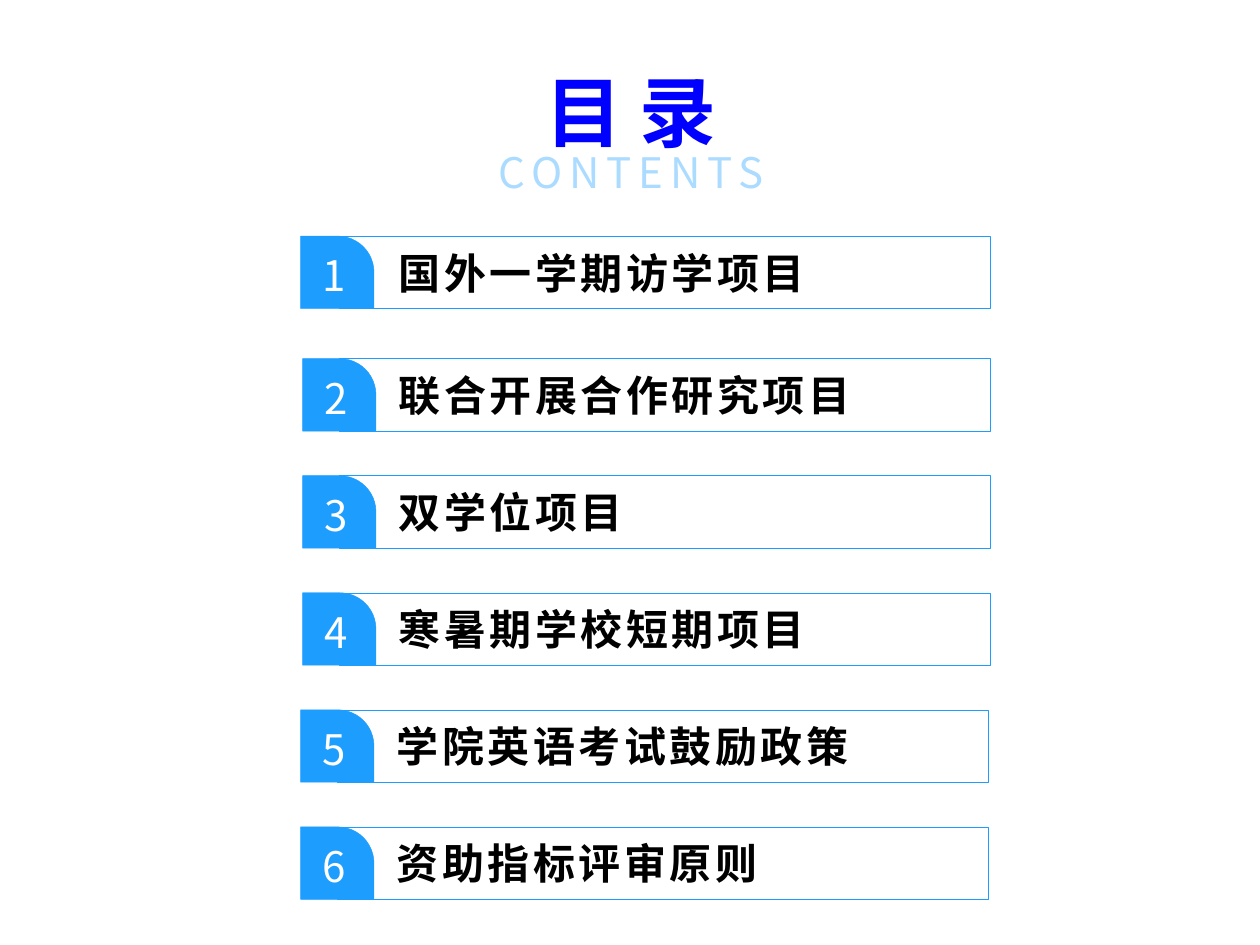
from dataclasses import dataclass

from lxml import etree
from pptx import Presentation
from pptx.dml.color import RGBColor
from pptx.enum.shapes import MSO_SHAPE
from pptx.enum.text import MSO_ANCHOR, MSO_AUTO_SIZE, PP_ALIGN
from pptx.oxml.ns import qn
from pptx.util import Cm, Pt

RECT = MSO_SHAPE.RECTANGLE
ROUND_ONE = MSO_SHAPE.ROUND_1_RECTANGLE
MIDDLE = MSO_ANCHOR.MIDDLE
LEFT, CENTER = PP_ALIGN.LEFT, PP_ALIGN.CENTER
FIT_SHAPE = MSO_AUTO_SIZE.SHAPE_TO_FIT_TEXT

SC, JP = "Noto Sans CJK SC", "Noto Sans CJK JP"
BLUE = "1D9EFF"
ROW_H, ROW_STEP = 1.46, 2.36
FIRST_TOP, SECOND_TOP = 4.76, 7.23


@dataclass
class Entry:
    title: str
    badge_left: float
    frame_left: float


ENTRIES = [
    Entry("国外一学期访学项目", 6.06, 6.84),
    Entry("联合开展合作研究项目", 6.1, 6.84),
    Entry("双学位项目", 6.1, 6.84),
    Entry("寒暑期学校短期项目", 6.1, 6.84),
    Entry("学院英语考试鼓励政策", 6.06, 6.8),
    Entry("资助指标评审原则", 6.06, 6.8),
]


def rgb(value: str) -> RGBColor:
    return RGBColor.from_string(value)


def write(tf, text: str, *, color: str, size: float = 24, font: str = SC,
          bold: bool = False, spacing: float = 0, align=CENTER) -> None:
    p = tf.paragraphs[0]
    p.alignment = align
    r = p.add_run()
    r.text = text
    r.font.size = Pt(size)
    r.font.bold = bold
    r.font.color.rgb = rgb(color)
    r.font.name = font
    rPr = r._r.get_or_add_rPr()
    etree.SubElement(rPr, qn("a:ea")).set("typeface", font)
    if spacing:
        rPr.set("spc", str(round(spacing * 100)))


def add_heading(s, left: float, top: float, width: float, height: float,
                text: str, wrap: bool, **style) -> None:
    sp = s.shapes.add_textbox(Cm(left), Cm(top), Cm(width), Cm(height))
    tf = sp.text_frame
    tf.word_wrap = wrap
    tf.auto_size = FIT_SHAPE
    write(tf, text, **style)


def add_box(s, kind, left: float, top: float, width: float,
            inset_left: float, inset_top: float, fill: str | None = None):
    sp = s.shapes.add_shape(kind, Cm(left), Cm(top), Cm(width), Cm(ROW_H))
    sp.shadow.inherit = False
    if fill:
        sp.fill.solid()
        sp.fill.fore_color.rgb = rgb(fill)
    else:
        sp.fill.background()
    sp.line.color.rgb = rgb(BLUE)
    sp.line.width = Pt(0.25)
    tf = sp.text_frame
    tf.word_wrap = True
    tf.vertical_anchor = MIDDLE
    tf.margin_left, tf.margin_top = Cm(inset_left), Cm(inset_top)
    tf.margin_right = tf.margin_bottom = 0
    return sp


def add_entry(s, number: int, top: float, entry: Entry) -> None:
    frame = add_box(s, RECT, entry.frame_left, top, 13.13, 1.2, 0)
    write(frame.text_frame, entry.title, color="000000", bold=True,
          spacing=2, align=LEFT)
    badge = add_box(s, ROUND_ONE, entry.badge_left, top, 1.48, 0.1, 0.1, BLUE)
    badge.adjustments[0] = 0.5
    write(badge.text_frame, str(number), color="FFFFFF", font=JP)


def main() -> None:
    prs = Presentation()
    prs.slide_width, prs.slide_height = Cm(25.4), Cm(19.05)
    s = prs.slides.add_slide(prs.slide_layouts[6])
    add_heading(s, 9.6, 2.82, 6.25, 1.27, "CONTENTS", False,
                color="ABDBFF", spacing=4)
    add_heading(s, 10.46, 1.17, 4.52, 2.13, "目 录", True,
                color="0000FF", size=44, bold=True)
    for i, entry in enumerate(ENTRIES):
        top = SECOND_TOP + (i - 1) * ROW_STEP if i else FIRST_TOP
        add_entry(s, i + 1, top, entry)
    prs.save("out.pptx")


if __name__ == "__main__":
    main()
